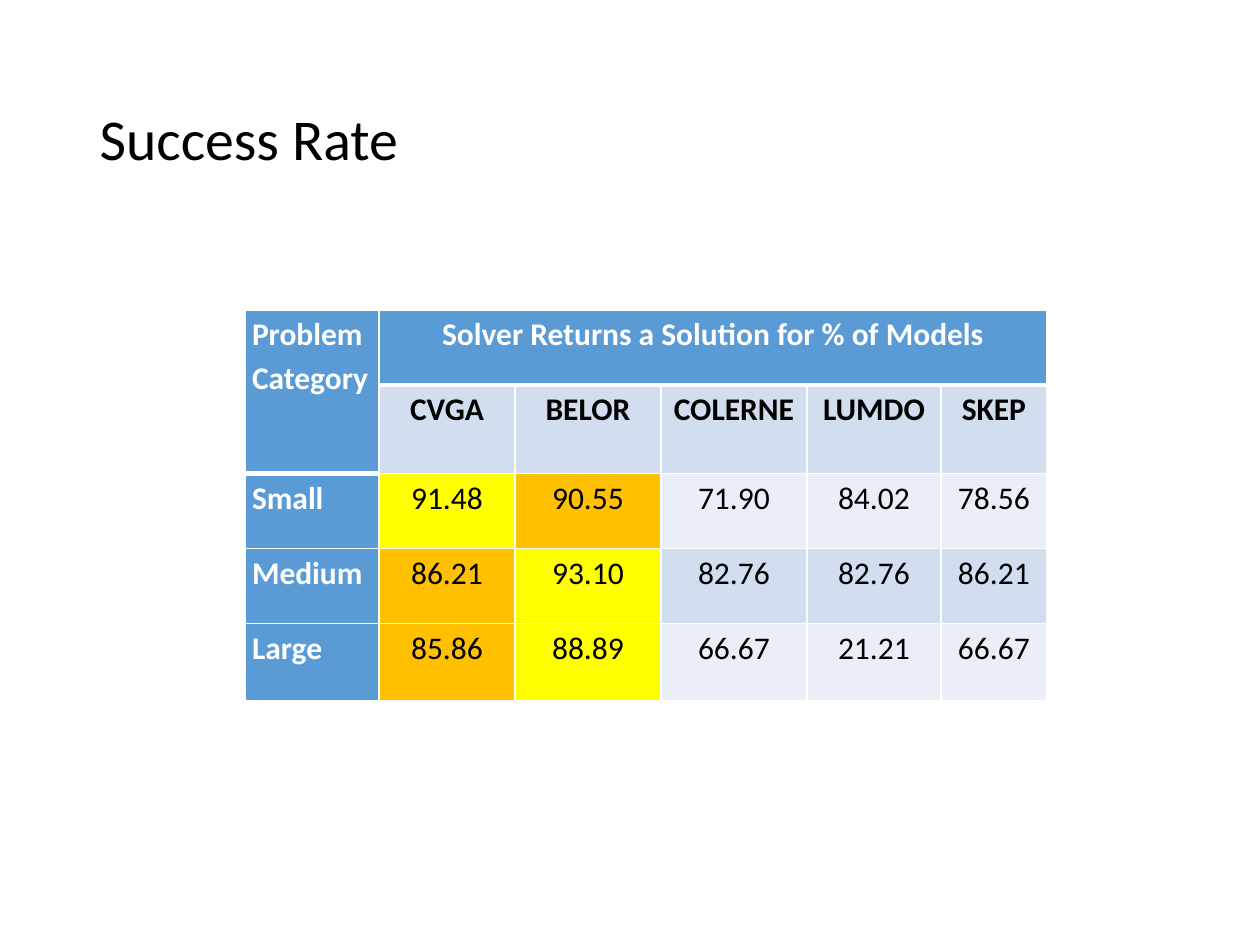
from dataclasses import dataclass

from lxml import etree
from pptx import Presentation
from pptx import util as u
from pptx.dml.color import RGBColor
from pptx.enum import text
from pptx.oxml.ns import qn

EMU_PER_PX = 914400 / 126

WHITE = RGBColor(0xFF, 0xFF, 0xFF)
BLACK = RGBColor(0, 0, 0)
BLUE = RGBColor(0x5B, 0x9B, 0xD5)
BAND_DARK = RGBColor(0xD2, 0xDE, 0xEF)
BAND_LIGHT = RGBColor(0xEA, 0xEF, 0xF7)
BEST = RGBColor(0xFF, 0xFF, 0x00)
SECOND = RGBColor(0xFF, 0xC0, 0x00)

COLUMN_WIDTHS = (134, 136, 146, 146, 134, 106)
ROW_HEIGHTS = (75, 58, 75, 75, 77)
SOLVERS = ("CVGA", "BELOR", "COLERNE", "LUMDO", "SKEP")


@dataclass(frozen=True)
class Category:
    name: str
    rates: tuple[str, ...]
    highlights: tuple[RGBColor, RGBColor]
    band: RGBColor


@dataclass(frozen=True)
class CellStyle:
    fill: RGBColor
    color: RGBColor
    bold: bool
    align: text.PP_ALIGN = text.PP_ALIGN.CENTER


HEADER = CellStyle(BLUE, WHITE, True)
ROW_HEADER = CellStyle(BLUE, WHITE, True, text.PP_ALIGN.LEFT)
SOLVER_HEADER = CellStyle(BAND_DARK, BLACK, True)

CATEGORIES = (
    Category("Small", ("91.48", "90.55", "71.90", "84.02", "78.56"), (BEST, SECOND), BAND_LIGHT),
    Category("Medium", ("86.21", "93.10", "82.76", "82.76", "86.21"), (SECOND, BEST), BAND_DARK),
    Category("Large", ("85.86", "88.89", "66.67", "21.21", "66.67"), (SECOND, BEST), BAND_LIGHT),
)


def px(length: int) -> u.Emu:
    return u.Emu(round(length * EMU_PER_PX))


def apply(target, values: dict) -> None:
    for name, value in values.items():
        setattr(target, name, value)


def write(para, words: str, size: int, color: RGBColor, bold: bool) -> None:
    span = para.add_run()
    span.text = words
    apply(span.font, {"name": "Calibri", "size": u.Pt(size), "bold": bold})
    span.font.color.rgb = color


def fill_cell(cell, words: str, style: CellStyle) -> None:
    cell.fill.solid()
    cell.fill.fore_color.rgb = style.fill
    apply(cell, {"margin_left": px(7), "margin_right": px(7), "margin_top": 0, "margin_bottom": 0})
    para = cell.text_frame.paragraphs[0]
    apply(para, {"alignment": style.align, "line_spacing": 1.15})
    write(para, words, 18, style.color, style.bold)


def add_borders(cell, top: int, bottom: int) -> None:
    """Draw white cell edges; the widths are in points."""
    properties = cell._tc.get_or_add_tcPr()
    edges = {"a:lnL": 1, "a:lnR": 1, "a:lnT": top, "a:lnB": bottom}
    for position, (tag, width) in enumerate(edges.items()):
        line = etree.Element(qn(tag), w=str(u.Pt(width)))
        solid = etree.SubElement(line, qn("a:solidFill"))
        etree.SubElement(solid, qn("a:srgbClr"), val=str(WHITE))
        properties.insert(position, line)


def add_title(page) -> None:
    title = page.shapes.title
    apply(title, {"left": px(87), "top": px(50), "width": px(1086), "height": px(183)})
    apply(title.text_frame, {"vertical_anchor": text.MSO_ANCHOR.MIDDLE,
                             "auto_size": text.MSO_AUTO_SIZE.NONE})
    para = title.text_frame.paragraphs[0]
    apply(para, {"alignment": text.PP_ALIGN.LEFT, "line_spacing": 0.9})
    write(para, "Success Rate", 33, BLACK, False)


def add_rate_table(page) -> None:
    frame = page.shapes.add_table(len(ROW_HEIGHTS), len(COLUMN_WIDTHS), px(245), px(310),
                                  px(sum(COLUMN_WIDTHS)), px(sum(ROW_HEIGHTS)))
    table = frame.table
    for column, width in zip(table.columns, COLUMN_WIDTHS):
        column.width = px(width)
    for row, height in zip(table.rows, ROW_HEIGHTS):
        row.height = px(height)

    table.cell(0, 0).merge(table.cell(1, 0))
    table.cell(0, 1).merge(table.cell(0, len(SOLVERS)))
    fill_cell(table.cell(0, 0), "Problem Category", ROW_HEADER)
    fill_cell(table.cell(0, 1), "Solver Returns a Solution for % of Models", HEADER)
    for column, solver in enumerate(SOLVERS, 1):
        fill_cell(table.cell(1, column), solver, SOLVER_HEADER)
    for row, category in enumerate(CATEGORIES, 2):
        fill_cell(table.cell(row, 0), category.name, ROW_HEADER)
        plain = (category.band,) * (len(SOLVERS) - len(category.highlights))
        fills = category.highlights + plain
        for column, (rate, fill) in enumerate(zip(category.rates, fills), 1):
            fill_cell(table.cell(row, column), rate, CellStyle(fill, BLACK, False))

    for row in range(len(ROW_HEIGHTS)):
        for column in range(len(COLUMN_WIDTHS)):
            header_end = 0 if column else 1
            add_borders(table.cell(row, column),
                        top=3 if row == header_end + 1 else 1,
                        bottom=3 if row == header_end or (row, column) == (0, 0) else 1)


def main() -> None:
    deck = Presentation()
    apply(deck, {"slide_width": px(1260), "slide_height": px(945)})
    page = deck.slides.add_slide(deck.slide_layouts[5])
    add_title(page)
    add_rate_table(page)
    deck.save("out.pptx")


if __name__ == "__main__":
    main()
